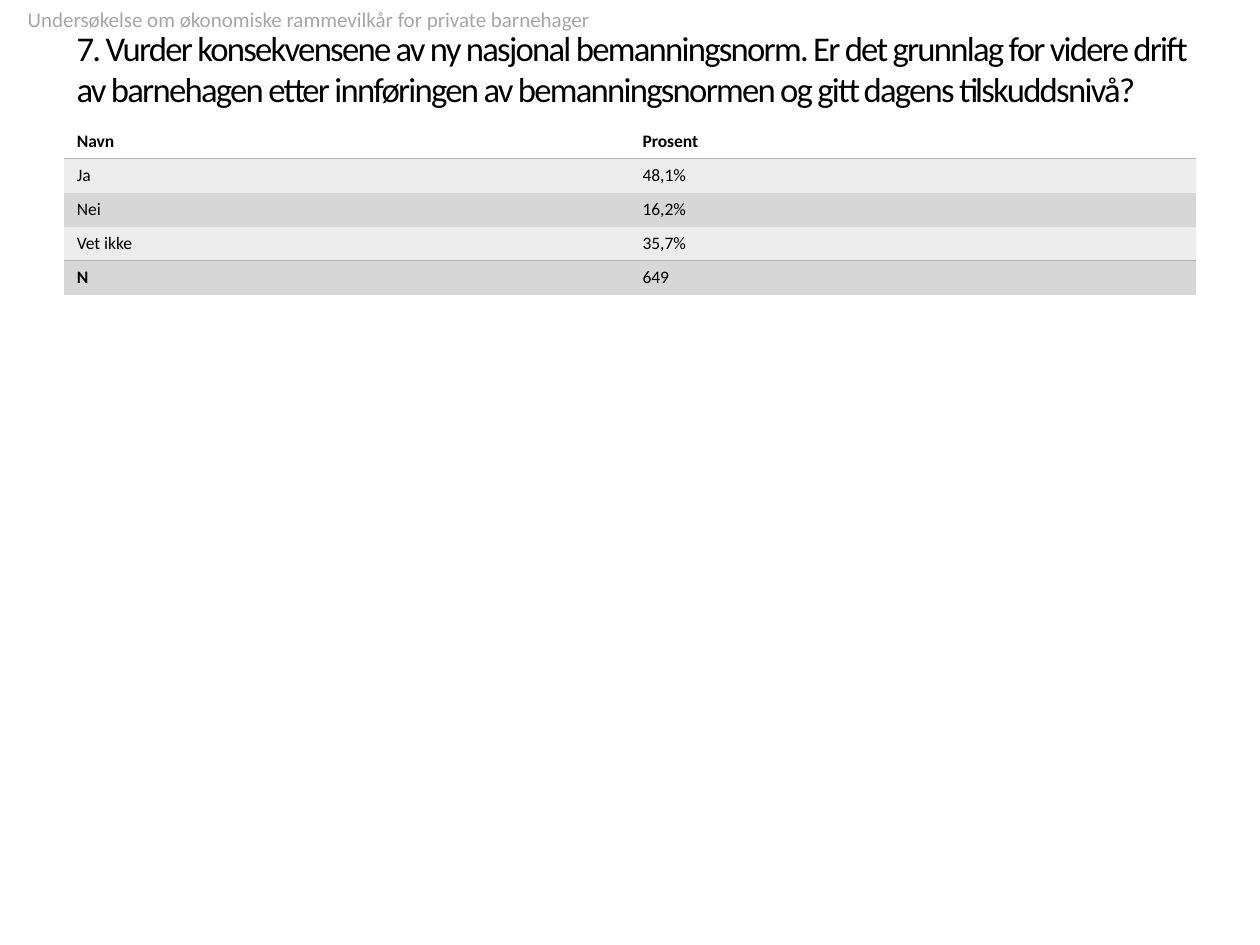
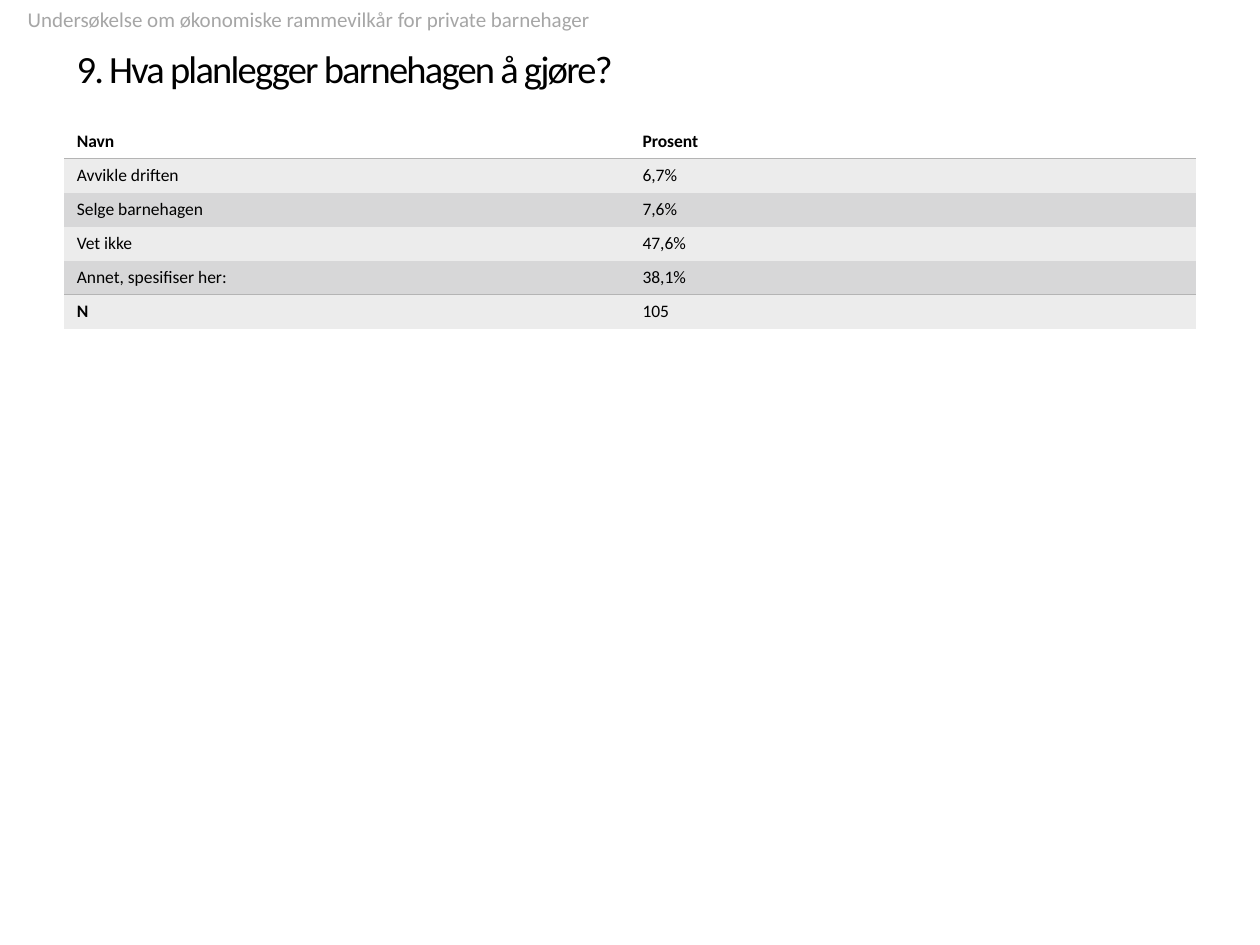
"""Build two survey result slides, each with a running header, a question and a table."""
from lxml import etree
from pptx import Presentation
from pptx.dml.color import RGBColor
from pptx.enum import text
from pptx.oxml import ns
from pptx.util import Inches, Pt

BLACK = RGBColor(0x00, 0x00, 0x00)
WHITE = RGBColor(0xFF, 0xFF, 0xFF)
HEADER_GRAY = RGBColor(0xA6, 0xA6, 0xA6)
RULE_GRAY = RGBColor(0xB4, 0xB4, 0xB4)
BANDS = [RGBColor(0xD7, 0xD7, 0xD8), RGBColor(0xEC, 0xEC, 0xEC)]
FONT = "Calibri"
HEADER = "Undersøkelse om økonomiske rammevilkår for private barnehager"
TABLE_LEFT, TABLE_TOP, COLUMN_WIDTH, ROW_HEIGHT = 0.51, 0.99, 4.49, 0.27

QUESTIONS = [
    {
        "title": "7. Vurder konsekvensene av ny nasjonal bemanningsnorm. "
                 "Er det grunnlag for videre drift av barnehagen etter innføringen "
                 "av bemanningsnormen og gitt dagens tilskuddsnivå?",
        "size": 19.8,
        "answers": [("Ja", "48,1%"), ("Nei", "16,2%"), ("Vet ikke", "35,7%"), ("N", "649")],
    },
    {
        "title": "9. Hva planlegger barnehagen å gjøre?",
        "size": 22,
        "answers": [("Avvikle driften", "6,7%"), ("Selge barnehagen", "7,6%"),
                    ("Vet ikke", "47,6%"), ("Annet, spesifiser her:", "38,1%"), ("N", "105")],
    },
]


def write(frame, words, color, frame_format, font_format):
    """Put one formatted run in a text frame and return it."""
    for name, value in frame_format.items():
        setattr(frame, name, value)
    run = frame.paragraphs[0].add_run()
    run.text = words
    for name, value in {"name": FONT, **font_format}.items():
        setattr(run.font, name, value)
    run.font.color.rgb = color
    return run


def set_borders(cell, rules):
    """Draw the given sides of a cell in gray and leave the other sides open."""
    properties = cell._tc.get_or_add_tcPr()
    for position, side in enumerate(["lnL", "lnR", "lnT", "lnB"]):
        line = etree.Element(ns.qn(f"a:{side}"), w=str(Pt(rules.get(side, 1))))
        if side in rules:
            fill = etree.SubElement(line, ns.qn("a:solidFill"))
            etree.SubElement(fill, ns.qn("a:srgbClr"), val=str(RULE_GRAY))
        else:
            etree.SubElement(line, ns.qn("a:noFill"))
        properties.insert(position, line)


presentation = Presentation()
presentation.slide_width = Inches(10)
presentation.slide_height = Inches(7.5)

for question in QUESTIONS:
    slide = presentation.slides.add_slide(presentation.slide_layouts[6])

    title = slide.shapes.add_textbox(Inches(0.51), Inches(0.24), Inches(9), Inches(0.6))
    title_format = {"word_wrap": True, "vertical_anchor": text.MSO_ANCHOR.MIDDLE,
                    "margin_right": Inches(0.05)}
    title_run = write(title.text_frame, question["title"], BLACK, title_format,
                      {"size": Pt(question["size"])})
    title_run.font._element.set("spc", "-100")

    header = slide.shapes.add_textbox(0, 0, Inches(10), Inches(0.25))
    write(header.text_frame, HEADER, HEADER_GRAY,
          {"word_wrap": True, "margin_left": Inches(0.22)}, {"size": Pt(12)})

    rows = [("Navn", "Prosent"), *question["answers"]]
    last = len(rows) - 1
    table = slide.shapes.add_table(
        len(rows), 2, Inches(TABLE_LEFT), Inches(TABLE_TOP),
        Inches(2 * COLUMN_WIDTH), Inches(len(rows) * ROW_HEIGHT)).table
    for column in table.columns:
        column.width = Inches(COLUMN_WIDTH)

    for row_index, row in enumerate(rows):
        table.rows[row_index].height = Inches(ROW_HEIGHT)
        rules = {0: {"lnB": 1}, 1: {"lnT": 1}, last - 1: {"lnB": 0.5}, last: {"lnT": 0.5}}
        for column_index, words in enumerate(row):
            cell = table.cell(row_index, column_index)
            cell.fill.solid()
            cell.fill.fore_color.rgb = BANDS[row_index % 2] if row_index else WHITE
            bold = row_index == 0 or words == "N"
            write(cell.text_frame, words, BLACK, {}, {"size": Pt(10), "bold": bold})
            set_borders(cell, rules.get(row_index, {}))

presentation.save("out.pptx")
